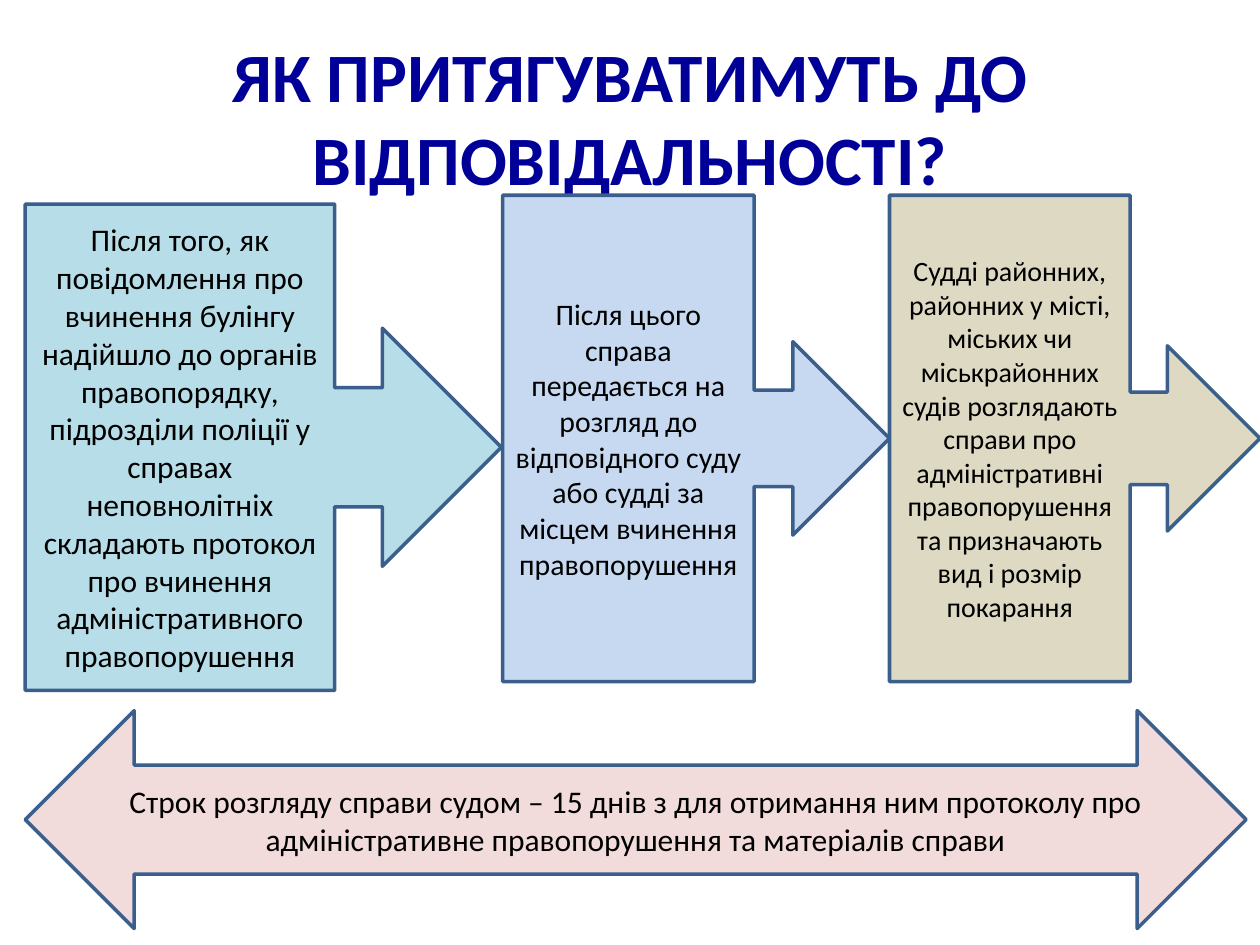
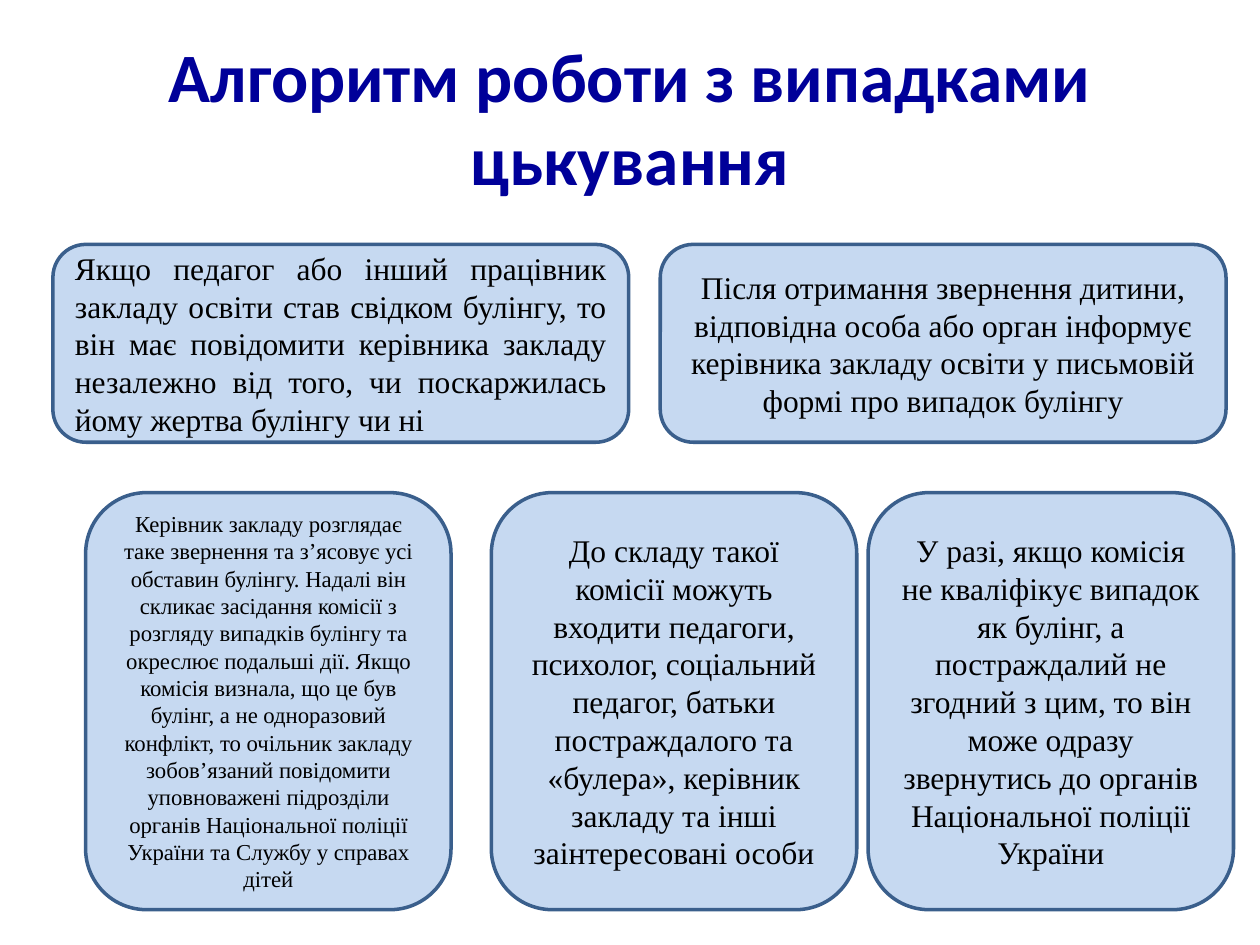
"""Build two slides on how bullying cases are handled."""
from dataclasses import dataclass

from pptx import Presentation
from pptx.dml.color import RGBColor
from pptx.enum.shapes import MSO_SHAPE
from pptx.enum.text import MSO_ANCHOR, PP_ALIGN
from pptx.util import Inches, Pt

CALLOUT = MSO_SHAPE.RIGHT_ARROW_CALLOUT
DOUBLE_ARROW = MSO_SHAPE.LEFT_RIGHT_ARROW
ROUNDED = MSO_SHAPE.FLOWCHART_ALTERNATE_PROCESS
CENTER, JUSTIFY = PP_ALIGN.CENTER, PP_ALIGN.JUSTIFY
MIDDLE = MSO_ANCHOR.MIDDLE


@dataclass(frozen=True)
class Theme:
    title_color: str = "000099"
    text_color: str = "000000"
    line_color: str = "3A5F8C"
    aqua: str = "B7DEE8"
    blue: str = "C6D9F1"
    sand: str = "DDD9C3"
    rose: str = "F2DCDB"
    sans: str = "Calibri"
    serif: str = "Times New Roman"
    title_size: float = 39.6
    body_size: float = 18
    medium_size: float = 17
    compact_size: float = 16
    small_size: float = 13
    line_width: float = 2


THEME = Theme()

COURT_STEPS = [
    (0.2, 1.62, 3.78, THEME.aqua, THEME.body_size,
     "Після того, як повідомлення про вчинення булінгу надійшло до органів "
     "правопорядку, підрозділи поліції у справах неповнолітніх складають "
     "протокол про вчинення адміністративного правопорушення"),
    (3.99, 1.55, 3.07, THEME.blue, THEME.medium_size,
     "Після цього справа передається на розгляд до відповідного суду або "
     "судді за місцем вчинення правопорушення"),
    (7.06, 1.55, 2.94, THEME.sand, THEME.compact_size,
     "Судді районних, районних у місті, міських чи міськрайонних судів "
     "розглядають справи про адміністративні правопорушення та призначають "
     "вид і розмір покарання"),
]
COURT_TERM = (
    "Строк розгляду справи судом – 15 днів з для отримання ним протоколу про "
    "адміністративне правопорушення та матеріалів справи")

REPORTING = [
    (0.42, 4.57, JUSTIFY,
     "Якщо педагог або інший працівник закладу освіти став свідком булінгу, "
     "то він має повідомити керівника закладу незалежно від того, чи "
     "поскаржилась йому жертва булінгу чи ні"),
    (5.24, 4.49, CENTER,
     "Після отримання звернення дитини, відповідна особа або орган інформує "
     "керівника закладу освіти у письмовій формі про випадок булінгу"),
]
COMMISSION = [
    (0.68, THEME.small_size,
     "Керівник закладу розглядає таке звернення та з’ясовує усі обставин "
     "булінгу. Надалі він скликає засідання комісії з розгляду випадків "
     "булінгу та окреслює подальші дії. Якщо комісія визнала, що це був "
     "булінг, а не одноразовий конфлікт, то очільник закладу зобов’язаний "
     "повідомити уповноважені підрозділи органів Національної поліції "
     "України та Службу у справах дітей"),
    (3.9, THEME.body_size,
     "До складу такої комісії можуть входити педагоги, психолог, соціальний "
     "педагог, батьки постраждалого та «булера», керівник закладу та інші "
     "заінтересовані особи"),
    (6.89, THEME.body_size,
     "У разі, якщо комісія не кваліфікує випадок як булінг, а постраждалий "
     "не згодний з цим, то він може одразу звернутись до органів "
     "Національної поліції України"),
]


def write_text(box, text, *, size=THEME.body_size, font=THEME.sans,
               color=THEME.text_color, bold=False, align=CENTER):
    """Put one formatted paragraph, vertically centred, into a box."""
    frame = box.text_frame
    frame.word_wrap = True
    frame.vertical_anchor = MIDDLE
    para = frame.paragraphs[0]
    para.alignment = align
    span = para.add_run()
    span.text = text
    span.font.size = Pt(size)
    span.font.name = font
    span.font.bold = bold
    span.font.color.rgb = RGBColor.from_string(color)


def add_page(deck, title):
    """Add a blank page with the shared title style."""
    page = deck.slides.add_slide(deck.slide_layouts[6])
    box = page.shapes.add_textbox(
        Inches(0.5), Inches(0.3), Inches(9), Inches(1.25))
    write_text(box, title, size=THEME.title_size,
               color=THEME.title_color, bold=True)
    return page


def add_block(page, kind, place, text, fill=THEME.blue, **text_format):
    """Add an outlined shape with text at left, top, width, height."""
    box = page.shapes.add_shape(kind, *map(Inches, place))
    box.shadow.inherit = False
    box.fill.solid()
    box.fill.fore_color.rgb = RGBColor.from_string(fill)
    box.line.color.rgb = RGBColor.from_string(THEME.line_color)
    box.line.width = Pt(THEME.line_width)
    write_text(box, text, **text_format)


def build_liability_page(deck):
    """Show the steps to court and the term of the hearing."""
    page = add_page(deck, "ЯК ПРИТЯГУВАТИМУТЬ ДО ВІДПОВІДАЛЬНОСТІ?")
    for left, top, width, fill, size, text in COURT_STEPS:
        add_block(page, CALLOUT, (left, top, width, 3.86), text, fill,
                  size=size)
    add_block(page, DOUBLE_ARROW, (0.2, 5.64, 9.69, 1.73), COURT_TERM,
              THEME.rose)


def build_algorithm_page(deck):
    """Show reporting above the work of the commission."""
    page = add_page(deck, "Алгоритм роботи з випадками цькування")
    for left, width, align, text in REPORTING:
        add_block(page, ROUNDED, (left, 1.94, width, 1.57), text,
                  font=THEME.serif, align=align)
    for left, size, text in COMMISSION:
        add_block(page, ROUNDED, (left, 3.91, 2.9, 3.31), text,
                  font=THEME.serif, size=size)


def main():
    """Build and save the deck."""
    deck = Presentation()
    deck.slide_width, deck.slide_height = Inches(10), Inches(7.5)
    build_liability_page(deck)
    build_algorithm_page(deck)
    deck.save("out.pptx")


if __name__ == "__main__":
    main()
